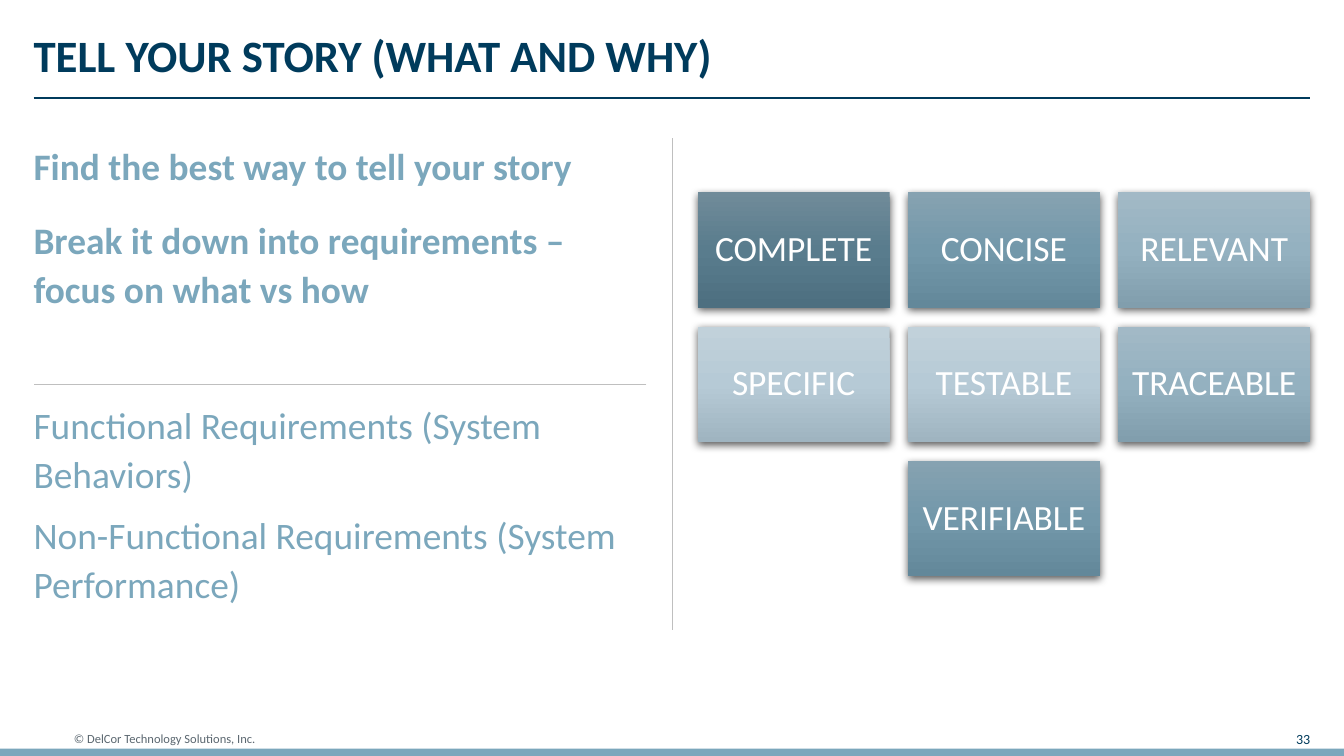
"""Build the "Tell your story" slide with its grid of requirement qualities."""
from lxml.etree import SubElement
from pptx import Presentation
from pptx.dml.color import RGBColor
from pptx.enum.shapes import MSO_CONNECTOR, MSO_SHAPE
from pptx.enum.text import MSO_ANCHOR, PP_ALIGN
from pptx.oxml.ns import qn
from pptx.util import Inches, Pt

NAVY = RGBColor(0x00, 0x3B, 0x5C)
SKY = RGBColor(0x7B, 0xA7, 0xBC)
SLATE = RGBColor(0x5B, 0x67, 0x70)
SILVER = RGBColor(0xBF, 0xBF, 0xBF)
WHITE = RGBColor(0xFF, 0xFF, 0xFF)
BLACK = RGBColor(0x00, 0x00, 0x00)
DEEP = [RGBColor(0x70, 0x8B, 0x99), RGBColor(0x59, 0x7C, 0x8D), RGBColor(0x4D, 0x6F, 0x80)]
MEDIUM = [RGBColor(0x86, 0xA2, 0xB1), RGBColor(0x73, 0x98, 0xAA), RGBColor(0x63, 0x88, 0x9A)]
SOFT = [RGBColor(0xA2, 0xB9, 0xC6), RGBColor(0x94, 0xB1, 0xC0), RGBColor(0x81, 0x9E, 0xAD)]
PALE = [RGBColor(0xC1, 0xD1, 0xDA), RGBColor(0xB6, 0xCA, 0xD6), RGBColor(0x9F, 0xB4, 0xC0)]

FONT = "Calibri"
TITLE = "TELL YOUR STORY (WHAT AND WHY)"
ADVICE = ["Find the best way to tell your story",
          "Break it down into requirements – focus on what vs how"]
REQUIREMENT_TYPES = ["Functional Requirements (System Behaviors)",
                     "Non-Functional Requirements (System Performance)"]
COPYRIGHT = "© DelCor Technology Solutions, Inc."
PAGE_NUMBER = "33"
QUALITIES = [
    [("COMPLETE", DEEP), ("CONCISE", MEDIUM), ("RELEVANT", SOFT)],
    [("SPECIFIC", PALE), ("TESTABLE", PALE), ("TRACEABLE", SOFT)],
    [("VERIFIABLE", MEDIUM)],
]
RULES = [
    ((0.25, 0.73), (9.75, 0.73), NAVY, 1),
    ((5, 1.03), (5, 4.69), SILVER, 0.5),
    ((4.81, 2.86), (0.25, 2.86), SILVER, 0.5),
]

SLIDE_WIDTH = 10
SLIDE_HEIGHT = SLIDE_WIDTH * 9 / 16
LEFT, RIGHT = 0.25, 9.75
COLUMN_WIDTH, COLUMN_HEIGHT = 4.56, 1.72
GRID_LEFT, GRID_TOP, GRID_COLUMNS = 5.19, 1.43, 3
TILE_WIDTH, TILE_HEIGHT, ROW_PITCH = 1.43, 0.86, 1
COLUMN_PITCH = (RIGHT - GRID_LEFT - TILE_WIDTH) / (GRID_COLUMNS - 1)


def write(frame, texts, size, color, bold=False, align=PP_ALIGN.LEFT,
          anchor=MSO_ANCHOR.TOP, spacing=1.0, gap=0, inset=0):
    frame.word_wrap = True
    frame.vertical_anchor = anchor
    frame.margin_left = frame.margin_right = Inches(inset)
    frame.margin_top = frame.margin_bottom = Inches(inset)
    for index, text in enumerate(texts):
        paragraph = frame.add_paragraph() if index else frame.paragraphs[0]
        paragraph.alignment = align
        paragraph.line_spacing = spacing
        if index:
            paragraph.space_before = Pt(gap)
        run = paragraph.add_run()
        run.text = text
        run.font.name = FONT
        run.font.size = Pt(size)
        run.font.bold = bold
        run.font.color.rgb = color


def add_text(slide, box, texts, size, color, **style):
    textbox = slide.shapes.add_textbox(*map(Inches, box))
    write(textbox.text_frame, texts, size, color, **style)


def add_rectangle(slide, box):
    rectangle = slide.shapes.add_shape(MSO_SHAPE.RECTANGLE, *map(Inches, box))
    rectangle.shadow.inherit = False
    rectangle.line.fill.background()
    return rectangle


def add_rule(slide, start, end, color, width):
    rule = slide.shapes.add_connector(MSO_CONNECTOR.STRAIGHT, *map(Inches, start + end))
    rule.line.color.rgb = color
    rule.line.width = Pt(width)
    SubElement(rule._element.spPr, qn("a:effectLst"))


def add_tile(slide, box, label, shades):
    tile = add_rectangle(slide, box)
    tile.fill.gradient()
    tile.fill.gradient_angle = 270
    properties = tile._element.spPr
    stops = properties.find(".//" + qn("a:gsLst"))
    for stop in list(stops):
        stops.remove(stop)
    for index, shade in enumerate(shades):
        stop = SubElement(stops, qn("a:gs"), pos=str(index * 50000))
        SubElement(stop, qn("a:srgbClr"), val=str(shade))
    shadow = SubElement(properties.find(qn("a:effectLst")), qn("a:outerShdw"),
                        blurRad=str(Pt(4.5)), dist=str(Pt(1.5)), dir="5400000",
                        algn="ctr", rotWithShape="0")
    shadow_color = SubElement(shadow, qn("a:srgbClr"), val=str(BLACK))
    SubElement(shadow_color, qn("a:alpha"), val="63000")
    write(tile.text_frame, [label], 19, WHITE, align=PP_ALIGN.CENTER,
          anchor=MSO_ANCHOR.MIDDLE, spacing=0.9, inset=0.08)


def main():
    presentation = Presentation()
    presentation.slide_width = Inches(SLIDE_WIDTH)
    presentation.slide_height = Inches(SLIDE_HEIGHT)
    slide = presentation.slides.add_slide(presentation.slide_layouts[6])

    footer_bar = add_rectangle(slide, (0, 5.57, SLIDE_WIDTH, 0.09))
    footer_bar.fill.solid()
    footer_bar.fill.fore_color.rgb = SKY
    add_text(slide, (0.55, 5.41, 1.92, 0.17), [COPYRIGHT], 6.7, SLATE,
             anchor=MSO_ANCHOR.MIDDLE)
    add_text(slide, (9.39, 5.41, 0.36, 0.17), [PAGE_NUMBER], 7.5, NAVY,
             align=PP_ALIGN.RIGHT, anchor=MSO_ANCHOR.MIDDLE)
    for rule in RULES:
        add_rule(slide, *rule)

    add_text(slide, (LEFT, 0.25, RIGHT - LEFT, 0.48), [TITLE], 24, NAVY,
             bold=True, spacing=0.9)
    add_text(slide, (LEFT, 1.03, COLUMN_WIDTH, COLUMN_HEIGHT), ADVICE, 20, SKY,
             bold=True, spacing=1.1, gap=13.5)
    add_text(slide, (LEFT, 2.96, COLUMN_WIDTH, COLUMN_HEIGHT), REQUIREMENT_TYPES, 20, SKY,
             spacing=1.1, gap=6)

    for row, qualities in enumerate(QUALITIES):
        first_column = (GRID_COLUMNS - len(qualities)) / 2
        for column, (label, shades) in enumerate(qualities):
            left = GRID_LEFT + (first_column + column) * COLUMN_PITCH
            top = GRID_TOP + row * ROW_PITCH
            add_tile(slide, (left, top, TILE_WIDTH, TILE_HEIGHT), label, shades)

    presentation.save("out.pptx")


if __name__ == "__main__":
    main()
